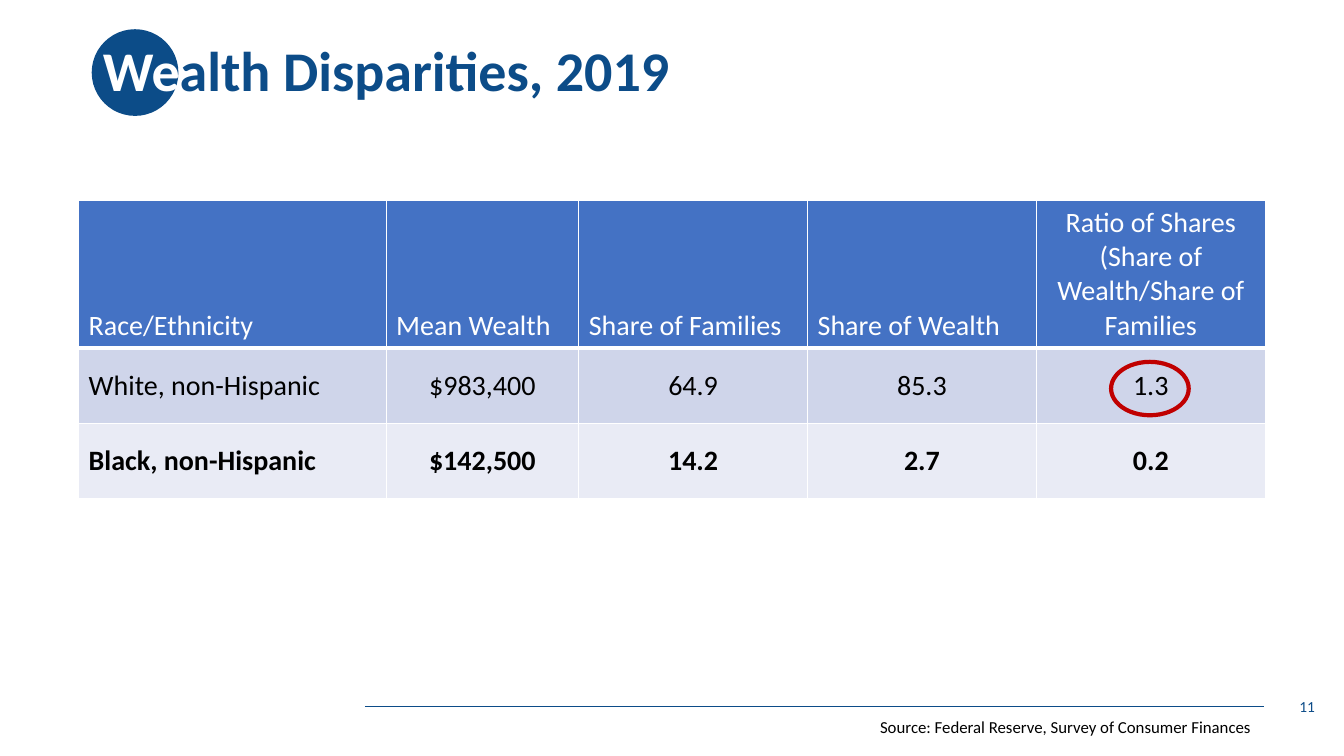
from lxml import etree
from pptx import Presentation
from pptx import util as u
from pptx.dml.color import RGBColor
from pptx.enum import shapes, text
from pptx.oxml.ns import qn

PX = 9144  # 100 px to the inch
FONT = "Calibri"
COLORS = {
    "navy": "0C4C88", "white": "FFFFFF", "black": "000000", "red": "C00000",
    "header": "4472C4", "band": "CFD5EA", "pale": "E9EBF5",
}
COLUMN_WIDTHS = [305, 191, 227, 227, 227]
ROW_HEIGHTS = [146, 75, 75]
ROWS = [
    ["Race/Ethnicity", "Mean Wealth", "Share of Families", "Share of Wealth",
     "Ratio of Shares (Share of Wealth/Share of Families"],
    ["White, non-Hispanic", "$983,400", "64.9", "85.3", "1.3"],
    ["Black, non-Hispanic", "$142,500", "14.2", "2.7", "0.2"],
]


def rgb(name):
    return RGBColor.from_string(COLORS[name])


def emu(*lengths):
    return [u.Emu(n * PX) for n in lengths]


def style(run, size, color, bold=False):
    f = run.font
    f.name, f.size, f.bold = FONT, u.Pt(size), bold
    f.color.rgb = rgb(color)


def add_ellipse(s, box, fill=None, line=None):
    sp = s.shapes.add_shape(shapes.MSO_SHAPE.OVAL, *emu(*box))
    sp.shadow.inherit = False
    if fill:
        sp.fill.solid()
        sp.fill.fore_color.rgb = rgb(fill)
        sp.line.fill.background()
    else:
        sp.fill.background()
        sp.line.color.rgb = rgb(line)
        sp.line.width = u.Pt(3)
    return sp


def add_label(s, box, content, size, color, align, anchor, wrap):
    tf = s.shapes.add_textbox(*emu(*box)).text_frame
    tf.word_wrap = wrap
    tf.vertical_anchor = anchor
    p = tf.paragraphs[0]
    p.text = content
    p.alignment = align
    style(p.runs[0], size, color)


def add_title(s, left, top, width, height):
    """Place the title over a disc that holds its first two letters."""
    title = s.shapes.title
    title.left, title.top, title.width, title.height = emu(left, top, width, height)
    tf = title.text_frame
    tf.vertical_anchor = text.MSO_ANCHOR.MIDDLE
    p = tf.paragraphs[0]
    p.alignment = text.PP_ALIGN.LEFT
    p.line_spacing = 0.9
    for part, color in (("We", "white"), ("alth Disparities, 2019", "navy")):
        r = p.add_run()
        r.text = part
        style(r, 40, color, True)
    disc = add_ellipse(s, (left - 1, top + 29, 86, 86), fill="navy")
    title.element.addprevious(disc.element)


def set_borders(cell, top, bottom):
    """Draw white cell borders, with top and bottom widths in points."""
    tcPr = cell._tc.get_or_add_tcPr()
    for side, width in (("L", 1), ("R", 1), ("T", top), ("B", bottom)):
        ln = etree.SubElement(tcPr, qn(f"a:ln{side}"), w=str(u.Pt(width)))
        fill = etree.SubElement(ln, qn("a:solidFill"))
        etree.SubElement(fill, qn("a:srgbClr"), val=COLORS["white"])


def add_wealth_table(s, left, top):
    box = emu(left, top, sum(COLUMN_WIDTHS), sum(ROW_HEIGHTS))
    table = s.shapes.add_table(len(ROWS), len(COLUMN_WIDTHS), *box).table
    for column, width in zip(table.columns, COLUMN_WIDTHS):
        column.width = u.Emu(width * PX)
    for i, (row, height) in enumerate(zip(ROWS, ROW_HEIGHTS)):
        table.rows[i].height = u.Emu(height * PX)
        for j, value in enumerate(row):
            cell = table.cell(i, j)
            set_borders(cell, 3 if i == 1 else 1, 3 if i == 0 else 1)
            cell.fill.solid()
            cell.fill.fore_color.rgb = rgb(("header", "band", "pale")[i])
            cell.vertical_anchor = text.MSO_ANCHOR.MIDDLE if i else text.MSO_ANCHOR.BOTTOM
            p = cell.text_frame.paragraphs[0]
            p.text = value
            centred = j > 0 if i else j == len(row) - 1
            p.alignment = text.PP_ALIGN.CENTER if centred else text.PP_ALIGN.LEFT
            style(p.runs[0], 20, "black" if i else "white", i == 2)
    add_ellipse(s, (left + 1024, top + 160, 77, 53), line="red")


def add_footer(s, left, top, right):
    rule = s.shapes.add_connector(shapes.MSO_CONNECTOR.STRAIGHT, *emu(left, top, right, top))
    rule.line.color.rgb = rgb("navy")
    rule.line.width = u.Pt(0.5)
    etree.SubElement(rule.element.spPr, qn("a:effectLst"))
    add_label(s, (right - 240, top - 20, 300, 40), "11", 11, "navy",
              text.PP_ALIGN.RIGHT, text.MSO_ANCHOR.MIDDLE, True)
    add_label(s, (right - 391, top + 5, 392, 30),
              "Source: Federal Reserve, Survey of Consumer Finances", 12, "black",
              text.PP_ALIGN.LEFT, text.MSO_ANCHOR.TOP, False)


def main():
    prs = Presentation()
    prs.slide_width, prs.slide_height = emu(1333, 750)
    s = prs.slides.add_slide(prs.slide_layouts[5])
    add_title(s, 92, 0, 1150, 145)
    add_wealth_table(s, 78, 199)
    add_footer(s, 362, 701, 1254)
    prs.save("out.pptx")


if __name__ == "__main__":
    main()
